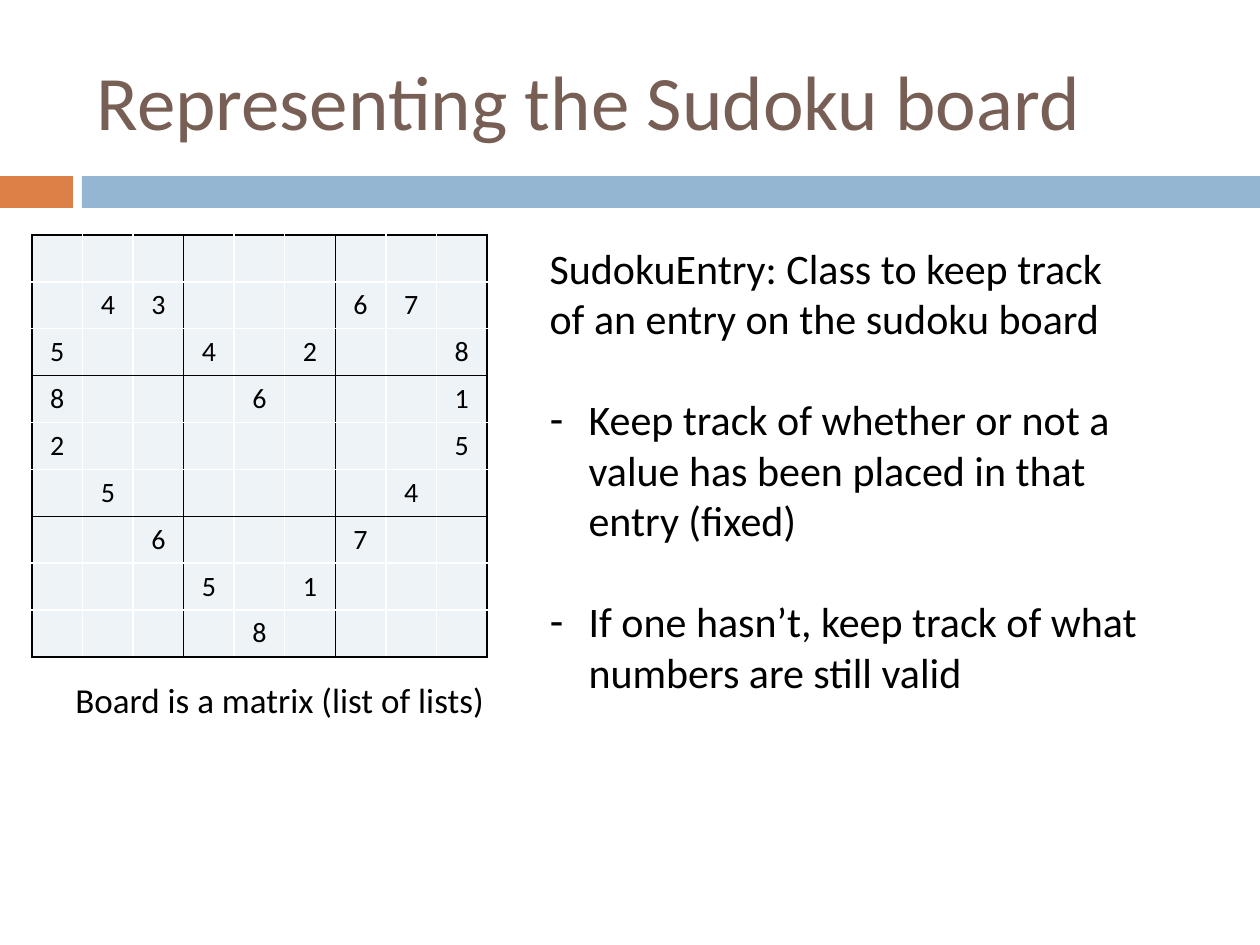
from dataclasses import dataclass
from itertools import product

from lxml.etree import SubElement
from pptx import Presentation
from pptx.dml.color import RGBColor
from pptx.enum.shapes import MSO_SHAPE as Shape
from pptx.enum.text import MSO_ANCHOR as Anchor, MSO_AUTO_SIZE as AutoSize, PP_ALIGN as Align
from pptx.oxml.ns import qn
from pptx.util import Emu, Pt

PX_PER_INCH = 126
HYPHEN = "-"


@dataclass(frozen=True)
class Theme:
    font: str = "Calibri"
    title: str = "775F55"
    text: str = "000000"
    accent: str = "DD8047"
    band: str = "94B6D2"
    cell: str = "EEF3F7"
    box_line: str = "000000"
    cell_line: str = "FFFFFF"
    title_size: int = 44
    list_size: int = 24
    caption_size: int = 20
    digit_size: int = 16


THEME = Theme()

BOARD = (
    ".........",
    ".43...67.",
    "5..4.2..8",
    "8...6...1",
    "2.......5",
    ".5.....4.",
    "..6...7..",
    "...5.1...",
    "....8....",
)
INTRO = "SudokuEntry: Class to keep track of an entry on the sudoku board"
DUTIES = (
    "Keep track of whether or not a value has been placed in that entry (fixed)",
    "If one hasn’t, keep track of what numbers are still valid",
)


def px(length):
    return Emu(round(length * 914400 / PX_PER_INCH))


def place(shape, box):
    shape.left, shape.top, shape.width, shape.height = map(px, box)


def style(para, size, color=THEME.text):
    para.font.name = THEME.font
    para.font.size = Pt(size)
    para.font.color.rgb = RGBColor.from_string(color)


def add_title(page, box, text):
    title = page.shapes.title
    place(title, box)
    frame = title.text_frame
    frame.text = text
    frame.vertical_anchor = Anchor.MIDDLE
    frame.auto_size = AutoSize.NONE
    para = frame.paragraphs[0]
    para.alignment = Align.LEFT
    style(para, THEME.title_size, THEME.title)


def add_divider(page, box):
    """A short accent block, a small gap, then a band to the right edge."""
    left, top, width, height = box
    accent_width, gap = 73, 9
    band_left = left + accent_width + gap
    parts = (
        (left, accent_width, THEME.accent),
        (band_left, left + width - band_left, THEME.band),
    )
    for part_left, part_width, color in parts:
        bar = page.shapes.add_shape(
            Shape.RECTANGLE, *map(px, (part_left, top, part_width, height)))
        bar.shadow.inherit = False
        bar.fill.solid()
        bar.fill.fore_color.rgb = RGBColor.from_string(color)
        bar.line.fill.background()


def set_borders(cell, row, column):
    """Dark lines on every third grid edge, light lines elsewhere."""
    edges = {"a:lnL": column, "a:lnR": column + 1, "a:lnT": row, "a:lnB": row + 1}
    properties = cell._tc.get_or_add_tcPr()
    for tag, index in edges.items():
        line = SubElement(properties, qn(tag), w=str(Pt(1)))
        fill = SubElement(line, qn("a:solidFill"))
        color = THEME.cell_line if index % 3 else THEME.box_line
        SubElement(fill, qn("a:srgbClr"), val=color)


def add_board(page, box, rows):
    count = len(rows)
    table = page.shapes.add_table(count, count, *map(px, box)).table
    table.first_row = table.horz_banding = False
    for index in range(count):
        table.columns[index].width = px(box[2] / count)
        table.rows[index].height = px(box[3] / count)
    for row, column in product(range(count), repeat=2):
        cell = table.cell(row, column)
        set_borders(cell, row, column)
        cell.fill.solid()
        cell.fill.fore_color.rgb = RGBColor.from_string(THEME.cell)
        para = cell.text_frame.paragraphs[0]
        para.alignment = Align.CENTER
        style(para, THEME.digit_size)
        digit = rows[row][column]
        if digit == ".":
            # The end mark keeps an empty cell as low as a filled one.
            end_mark = para._p.get_or_add_endParaRPr()
            end_mark.set("sz", str(THEME.digit_size * 100))
        else:
            para.add_run().text = digit


def add_caption(page, box, text):
    frame = page.shapes.add_textbox(*map(px, box)).text_frame
    frame.word_wrap = True
    frame.text = text
    para = frame.paragraphs[0]
    para.space_before = Pt(7)
    style(para, THEME.caption_size)


def set_bullet(para, mark=None, indent=0):
    properties = para._p.get_or_add_pPr()
    properties.set("marL", str(px(indent)))
    properties.set("indent", str(-px(indent)))
    # The bullet has to come before the default run properties.
    bullet = properties.makeelement(qn("a:buChar" if mark else "a:buNone"))
    if mark:
        bullet.set("char", mark)
    properties.find(qn("a:defRPr")).addprevious(bullet)


def add_duties(page, box, intro, duties):
    body = page.placeholders[1]
    place(body, box)
    frame = body.text_frame
    frame.word_wrap = True
    frame.auto_size = AutoSize.NONE
    frame.text = "\n".join((intro, *duties))
    for index, para in enumerate(frame.paragraphs):
        style(para, THEME.list_size)
        para.space_before = Pt(29 if index else 0)
        if index:
            set_bullet(para, HYPHEN, 39)
        else:
            set_bullet(para)


def main():
    deck = Presentation()
    deck.slide_width, deck.slide_height = px(1260), px(945)
    page = deck.slides.add_slide(deck.slide_layouts[1])
    add_divider(page, (0, 176, 1260, 32))
    add_title(page, (84, 32, 1124, 136), "Representing the Sudoku board")
    add_board(page, (32, 235, 455, 422), BOARD)
    add_caption(page, (63, 672, 455, 220), "Board is a matrix (list of lists)")
    add_duties(page, (537, 236, 619, 471), INTRO, DUTIES)
    deck.save("out.pptx")


if __name__ == "__main__":
    main()
